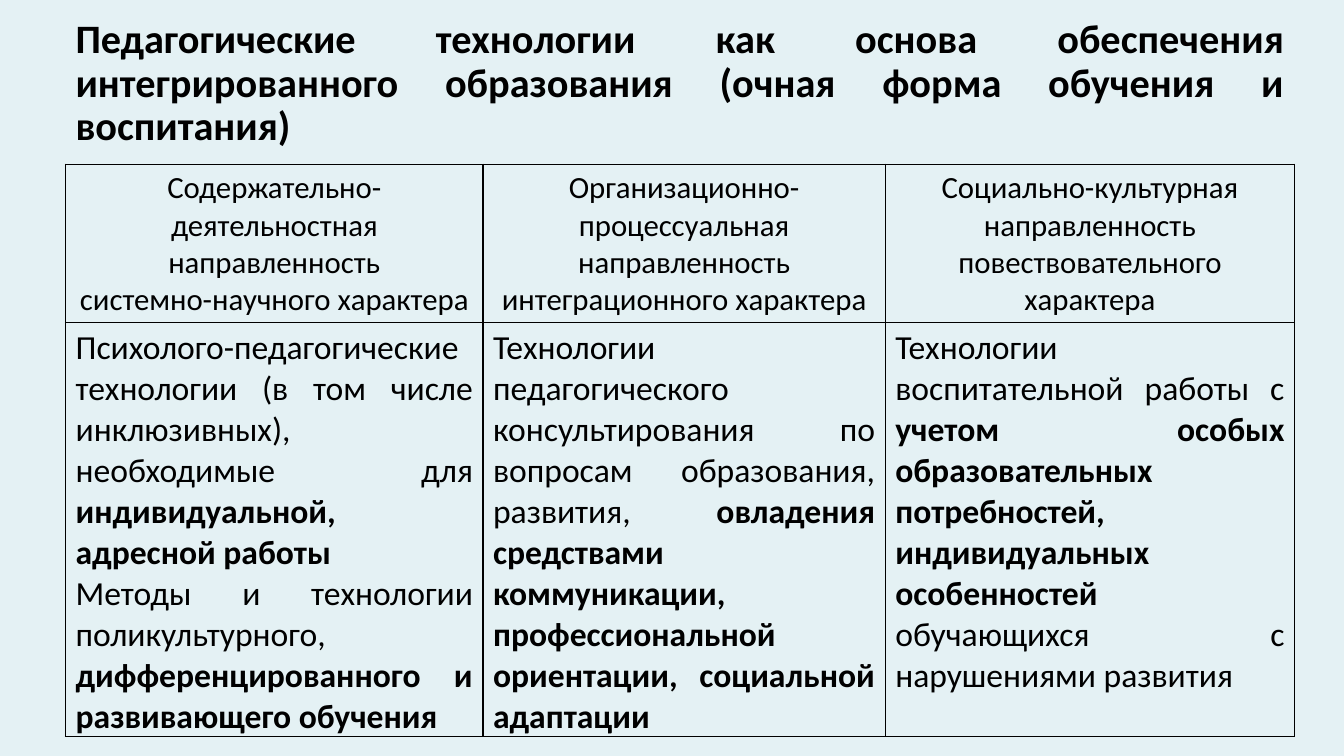
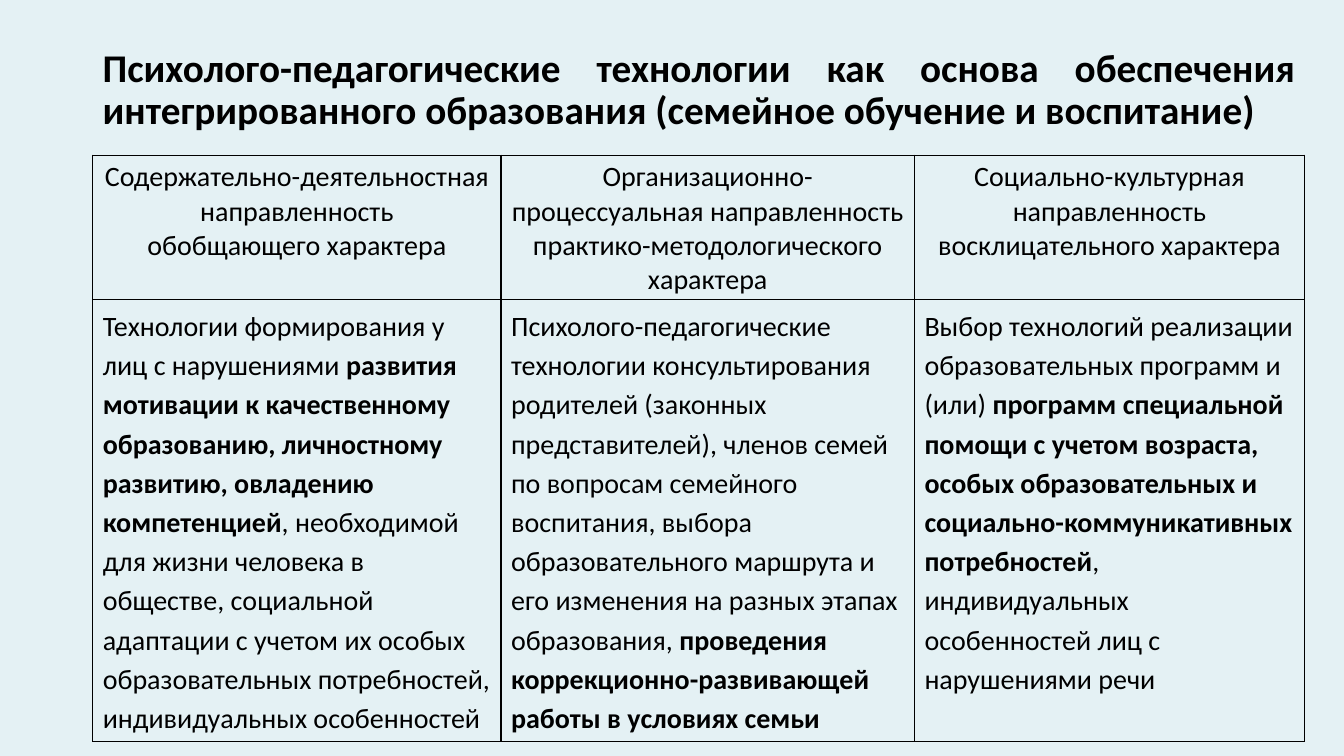
from dataclasses import dataclass

from lxml import etree
from pptx import Presentation
from pptx.dml.color import RGBColor
from pptx.enum.text import MSO_ANCHOR, PP_ALIGN
from pptx.oxml.ns import qn
from pptx.util import Inches, Pt

LEFT, MID, JUST = PP_ALIGN.LEFT, PP_ALIGN.CENTER, PP_ALIGN.JUSTIFY
CENTER = MSO_ANCHOR.MIDDLE
WIDE, HIGH = Inches(13.33), Inches(7.5)
BLANK = 6


@dataclass(frozen=True)
class Theme:
    back: str = "E4F1F4"
    ink: str = "000000"
    font: str = "Calibri"
    rule: float = 1
    lead: float = 0.9


@dataclass(frozen=True)
class Style:
    size: float
    align: int
    space: object = None
    bold: bool = False


@dataclass(frozen=True)
class Page:
    title: str
    left: float
    top: float
    tall: float
    start: float
    cols: tuple
    rows: tuple
    styles: tuple
    cells: tuple


THEME = Theme()

PAGES = (
    Page(
        title="Педагогические технологии как основа обеспечения "
              "интегрированного образования (очная форма обучения и воспитания)",
        left=4.88, top=3.6, tall=15.07, start=21.73,
        cols=(31.06, 29.93, 30.46), rows=(20.27, 54.8),
        styles=(Style(28.8, JUST, THEME.lead, True), Style(22, MID), Style(24, JUST)),
        cells=(
            (
                ("Содержательно-деятельностная направленность",
                 "системно-научного характера"),
                ("Организационно-процессуальная направленность "
                 "интеграционного характера",),
                ("Социально-культурная направленность "
                 "повествовательного характера",),
            ),
            (
                ("Психолого-педагогические технологии (в том числе инклюзивных), "
                 "необходимые для *индивидуальной, адресной работы*",
                 "Методы и технологии поликультурного, "
                 "*дифференцированного и развивающего обучения*"),
                ("Технологии педагогического консультирования по вопросам "
                 "образования, развития, *овладения средствами коммуникации, "
                 "профессиональной ориентации, социальной адаптации*",),
                ("Технологии воспитательной работы с *учетом особых "
                 "образовательных потребностей, индивидуальных особенностей *"
                 "обучающихся с нарушениями развития",),
            ),
        ),
    ),
    Page(
        title="Психолого-педагогические технологии как основа обеспечения "
              "интегрированного образования (семейное обучение и воспитание)",
        left=6.9, top=5.33, tall=13.33, start=20.53,
        cols=(30.38, 30.76, 29.03), rows=(18, 55.6),
        styles=(Style(28, JUST, THEME.lead, True), Style(20, MID),
                Style(20, LEFT, Pt(28))),
        cells=(
            (
                ("Содержательно-деятельностная направленность",
                 "обобщающего характера"),
                ("Организационно-процессуальная направленность "
                 "практико-методологического характера",),
                ("Социально-культурная направленность "
                 "восклицательного характера",),
            ),
            (
                ("Технологии формирования у лиц с нарушениями *развития мотивации "
                 "к качественному образованию, личностному развитию, овладению "
                 "компетенцией*, необходимой для жизни человека в обществе, "
                 "социальной адаптации с учетом их особых образовательных "
                 "потребностей, индивидуальных особенностей",),
                ("Психолого-педагогические технологии консультирования родителей "
                 "(законных представителей), членов семей по вопросам семейного "
                 "воспитания, выбора образовательного маршрута и его изменения на "
                 "разных этапах образования, *проведения коррекционно-развивающей "
                 "работы в условиях семьи*",),
                ("Выбор технологий реализации образовательных программ и (или) "
                 "*программ специальной помощи с учетом возраста, особых "
                 "образовательных и социально-коммуникативных потребностей*, "
                 "индивидуальных особенностей лиц с нарушениями речи",),
            ),
        ),
    ),
)


def across(share):
    return round(WIDE * share / 100)


def down(share):
    return round(HIGH * share / 100)


def write(frame, texts, style):
    frame.word_wrap = True
    for i, text in enumerate(texts):
        para = frame.add_paragraph() if i else frame.paragraphs[0]
        para.alignment = style.align
        para.line_spacing = style.space
        font = para.font
        font.name, font.size, font.bold = THEME.font, Pt(style.size), style.bold
        font.color.rgb = RGBColor.from_string(THEME.ink)
        for j, part in enumerate(text.split("*")):
            if part:
                run = para.add_run()
                run.text = part
                if j % 2:
                    run.font.bold = True


def frame_cell(cell):
    props = cell._tc.get_or_add_tcPr()
    for side in ("a:lnL", "a:lnR", "a:lnT", "a:lnB"):
        line = etree.SubElement(props, qn(side), w=str(Pt(THEME.rule)))
        fill = etree.SubElement(line, qn("a:solidFill"))
        etree.SubElement(fill, qn("a:srgbClr"), val=THEME.ink)
    cell.fill.background()


def add_title(slide, page):
    box = slide.shapes.add_textbox(across(page.left), down(page.top),
                                   across(sum(page.cols)), down(page.tall))
    box.text_frame.vertical_anchor = CENTER
    write(box.text_frame, (page.title,), page.styles[0])


def add_grid(slide, page):
    table = slide.shapes.add_table(
        len(page.rows), len(page.cols), across(page.left), down(page.start),
        across(sum(page.cols)), down(sum(page.rows))).table
    table.first_row = table.horz_banding = False
    for col, share in zip(table.columns, page.cols):
        col.width = across(share)
    for row, share, cells, style in zip(table.rows, page.rows, page.cells,
                                        page.styles[1:]):
        row.height = down(share)
        for cell, texts in zip(row.cells, cells):
            frame_cell(cell)
            write(cell.text_frame, texts, style)


def main():
    deck = Presentation()
    deck.slide_width, deck.slide_height = WIDE, HIGH
    fill = deck.slide_master.background.fill
    fill.solid()
    fill.fore_color.rgb = RGBColor.from_string(THEME.back)
    for page in PAGES:
        slide = deck.slides.add_slide(deck.slide_layouts[BLANK])
        add_title(slide, page)
        add_grid(slide, page)
    deck.save("out.pptx")


if __name__ == "__main__":
    main()
